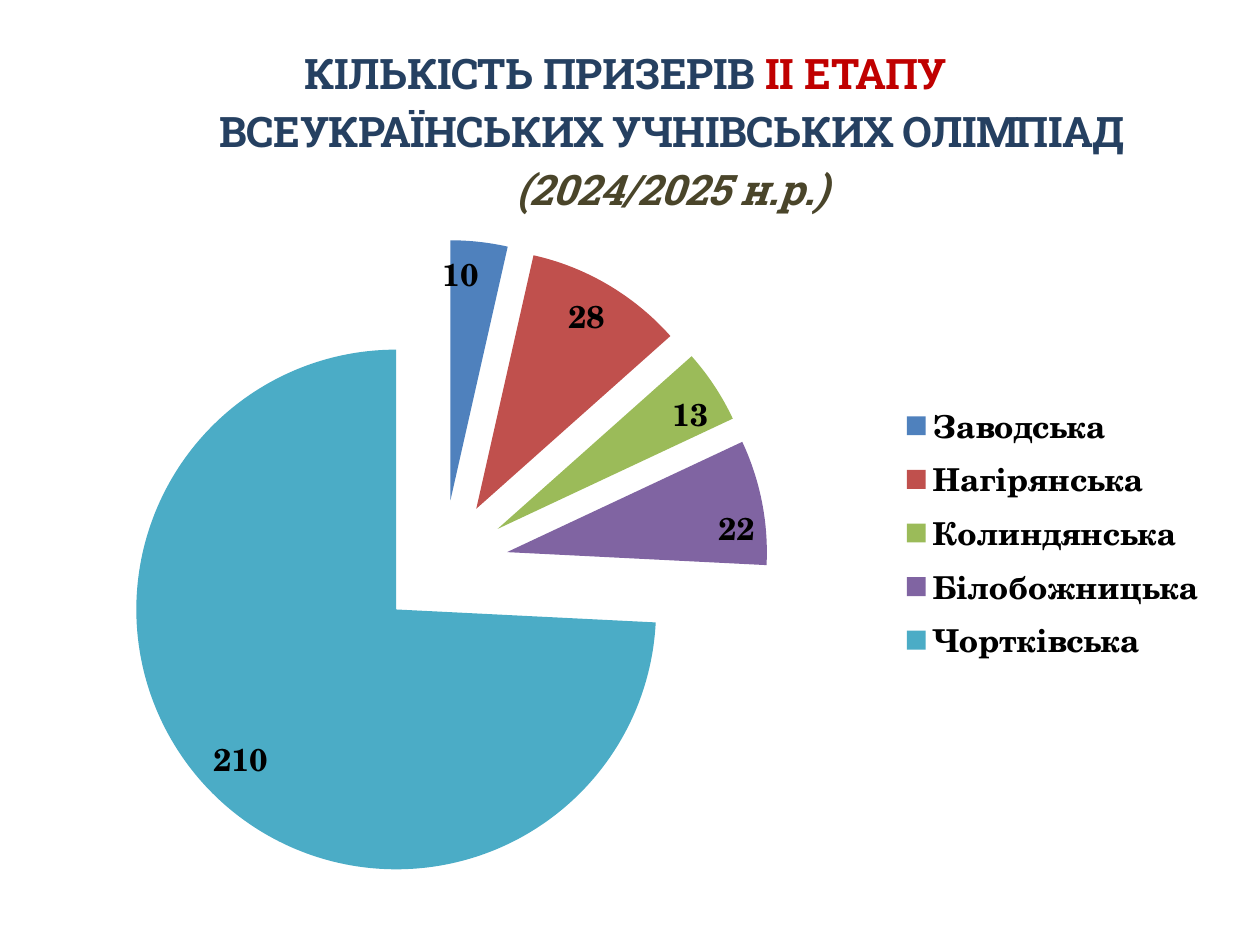
from lxml import etree
from pptx import Presentation
from pptx.chart.data import CategoryChartData
from pptx.dml.color import RGBColor
from pptx.enum.chart import XL_CHART_TYPE as ChartType, XL_LABEL_POSITION as LabelPos
from pptx.enum.chart import XL_LEGEND_POSITION as LegendPos
from pptx.enum.text import MSO_ANCHOR as Anchor, MSO_AUTO_SIZE as AutoSize, PP_ALIGN as Align
from pptx.oxml import parse_xml
from pptx.oxml.ns import nsdecls, qn
from pptx.util import Inches, Pt

TITLE_FONT = "Roboto Slab"
CHART_FONT = "TeX Gyre Schola"
NAVY, RED, OLIVE = "254061", "C00000", "4A452A"
PRIZES = [
    ("Заводська ", 10, "4F81BD"),
    ("Нагірянська ", 28, "C0504D"),
    ("Колиндянська", 13, "9BBB59"),
    ("Білобожницька", 22, "8064A2"),
    ("Чортківська", 210, "4BACC6"),
]


def rgb(value):
    return RGBColor.from_string(value)


def set_font(font, name, size, color, bold=True, italic=False):
    font.name = name
    font.size = Pt(size)
    font.bold = bold
    font.italic = italic
    font.color.rgb = rgb(color)


def add_run(p, text, color=NAVY, italic=False, spacing=-0.2):
    r = p.add_run()
    r.text = text
    set_font(r.font, TITLE_FONT, 24, color, italic=italic)
    r.font._element.set("spc", str(round(spacing * 100)))


def add_title(s):
    sp = s.shapes.title
    sp.left, sp.top = Inches(0.5), Inches(0.3)
    sp.width, sp.height = Inches(9), Inches(1.41)
    tf = sp.text_frame
    tf.word_wrap = True
    tf.auto_size = AutoSize.SHAPE_TO_FIT_TEXT
    tf.vertical_anchor = Anchor.MIDDLE
    tf.margin_left = tf.margin_right = tf.margin_bottom = 0
    tf.margin_top = Inches(0.01)
    p = tf.paragraphs[0]
    p.alignment = Align.CENTER
    p.line_spacing = 1.15
    pPr = p._p.get_or_add_pPr()
    pPr.set("marL", str(Inches(0.67)))
    pPr.set("indent", str(Inches(-0.66)))
    add_run(p, "КІЛЬКІСТЬ ПРИЗЕРІВ ")
    add_run(p, "ІІ ", color=RED, spacing=-0.1)
    add_run(p, "ЕТАПУ ", color=RED)
    p.add_line_break()
    add_run(p, "ВСЕУКРАЇНСЬКИХ УЧНІВСЬКИХ ОЛІМПІАД")
    add_run(p, " (2024/2025 н.р.)", color=OLIVE, italic=True)


def set_layout(element, anchor, x, y, w, h, inner=False):
    for old in element.findall(qn("c:layout")):
        element.remove(old)
    layout = parse_xml(f"<c:layout {nsdecls('c')}><c:manualLayout/></c:layout>")
    values = [("layoutTarget", "inner")] if inner else []
    values += [("xMode", "edge"), ("yMode", "edge"), ("x", x), ("y", y), ("w", w), ("h", h)]
    for tag, value in values:
        etree.SubElement(layout[0], qn(f"c:{tag}")).set("val", str(value))
    if anchor is None:
        element.insert(0, layout)
    else:
        anchor.addnext(layout)


def add_pie(s):
    data = CategoryChartData()
    data.categories = [name for name, _, _ in PRIZES]
    data.add_series("Series 1", [value for _, value, _ in PRIZES])
    chart = s.shapes.add_chart(ChartType.PIE, Inches(0.23), Inches(1.33),
                               Inches(9.45), Inches(5.86), data).chart
    set_font(chart.font, "Calibri", 18, "000000", bold=False)
    chart.has_title = False
    plot = chart.plots[0]
    plot.vary_by_categories = True
    series = plot.series[0]
    explosion = parse_xml(f'<c:explosion {nsdecls("c")} val="25"/>')
    series._element.find(qn("c:tx")).addnext(explosion)
    for i, (_, _, color) in enumerate(PRIZES):
        fill = series.points[i].format.fill
        fill.solid()
        fill.fore_color.rgb = rgb(color)
        etree.SubElement(series.points[i]._element.findall(".//" + qn("c:dPt"))[i],
                         qn("c:explosion")).set("val", "25")
    for point in series._element.findall(qn("c:dPt")):
        point.find(qn("c:spPr")).addprevious(point.find(qn("c:explosion")))
    plot.has_data_labels = True
    labels = plot.data_labels
    labels.show_value = True
    labels.position = LabelPos.INSIDE_END
    set_font(labels.font, CHART_FONT, 18, "000000")
    chart.has_legend = True
    legend = chart.legend
    legend.position = LegendPos.RIGHT
    legend.include_in_layout = False
    set_font(legend.font, CHART_FONT, 18, "000000")
    set_layout(legend._element, legend._element.find(qn("c:legendPos")), 0.73, 0.31, 0.26, 0.37)
    plot_area = plot._element.getparent()
    set_layout(plot_area, None, 0.075, 0.098, 0.546, 0.88, inner=True)


def main():
    prs = Presentation()
    prs.slide_width, prs.slide_height = Inches(10), Inches(7.5)
    s = prs.slides.add_slide(prs.slide_layouts[5])
    add_title(s)
    add_pie(s)
    prs.save("out.pptx")


if __name__ == "__main__":
    main()
